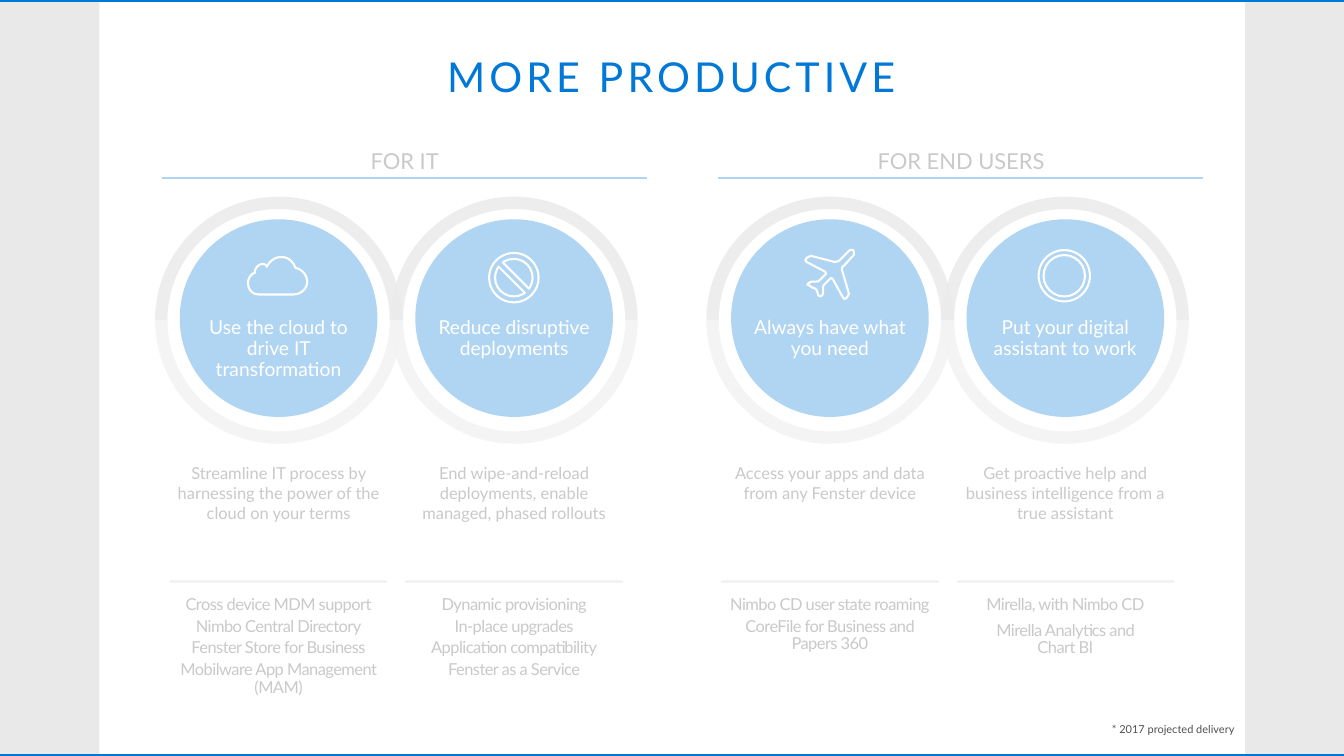
"""Builds the MORE PRODUCTIVE slide: four benefit circles for IT and for end users."""
from dataclasses import dataclass

from lxml import etree
from pptx import Presentation
from pptx.dml.color import RGBColor
from pptx.enum.shapes import MSO_CONNECTOR, MSO_SHAPE as Preset
from pptx.enum.text import MSO_ANCHOR as Anchor, MSO_AUTO_SIZE as AutoSize, PP_ALIGN as Align
from pptx.oxml.ns import qn
from pptx.util import Pt


@dataclass(frozen=True)
class Theme:
    font: str = "Lato"
    blue: str = "0078D7"
    white: str = "FFFFFF"
    text: str = "525252"
    note: str = "505050"
    margin: str = "E9E9E9"
    ring_top: str = "BFBFBF"
    ring_bottom: str = "D9D9D9"
    title_size: int = 30
    header_size: int = 16
    circle_size: int = 14
    body_size: int = 12
    note_size: int = 8


theme = Theme()
presentation = Presentation()
presentation.slide_width, presentation.slide_height = Pt(979.2), Pt(550.8)
slide = presentation.slides.add_slide(presentation.slide_layouts[6])
shapes = slide.shapes


def paint(shape, fill=None, line=None, width=1.5, opacity=100):
    shape.shadow.inherit = False
    if fill:
        shape.fill.solid()
        shape.fill.fore_color.rgb = RGBColor.from_string(fill)
        if opacity < 100:
            color = shape.fill._xPr.find(qn("a:solidFill"))[0]
            etree.SubElement(color, qn("a:alpha")).set("val", str(opacity * 1000))
    else:
        shape.fill.background()
    if line:
        shape.line.color.rgb = RGBColor.from_string(line)
        shape.line.width = Pt(width)
    else:
        shape.line.fill.background()


def write_text(shape, text, size, color=theme.text, insets=(0, 0, 0, 0), align=Align.CENTER,
               anchor=Anchor.TOP, line_spacing=0.9, space_after=0, tracking=0, wrap=True):
    frame = shape.text_frame
    frame.word_wrap, frame.vertical_anchor = wrap, anchor
    frame.auto_size = AutoSize.NONE if wrap else AutoSize.SHAPE_TO_FIT_TEXT
    (frame.margin_left, frame.margin_top,
     frame.margin_right, frame.margin_bottom) = [Pt(inset) for inset in insets]
    for index, words in enumerate(text.split("\n")):
        paragraph = frame.add_paragraph() if index else frame.paragraphs[0]
        paragraph.alignment = align
        paragraph.line_spacing, paragraph.space_after = line_spacing, Pt(space_after)
        run = paragraph.add_run()
        run.text = words
        run.font.name, run.font.size = theme.font, Pt(size)
        run.font.color.rgb = RGBColor.from_string(color)
        if tracking:
            run._r.get_or_add_rPr().set("spc", str(int(tracking * 100)))


for left in (0, 907.2):
    paint(shapes.add_shape(Preset.RECTANGLE, Pt(left), Pt(1.4), Pt(72.5), Pt(548)), theme.margin)
for top in (549.4, 0):
    bar = shapes.add_shape(Preset.RECTANGLE, 0, Pt(top), presentation.slide_width, Pt(1.4))
    paint(bar, theme.blue, theme.blue, 0.75)

title = shapes.add_textbox(Pt(49.7), Pt(34.6), Pt(879.1), Pt(43.9))
write_text(title, "MORE PRODUCTIVE", theme.title_size, theme.blue, (11.5, 7.2, 11.5, 7.2),
           space_after=6, tracking=3)

columns = [
    (203, 192.2, 3, "Use the cloud to drive IT transformation",
     "Streamline IT process by harnessing the power of the cloud on your terms",
     "Cross device MDM support\nNimbo Central Directory\nFenster Store for Business\n"
     "Mobilware App Management (MAM)"),
    (374.6, 173.5, 3, "Reduce disruptive deployments",
     "End wipe-and-reload deployments, enable managed, phased rollouts",
     "Dynamic provisioning\nIn-place upgrades\nApplication compatibility\nFenster as a Service"),
    (604.7, 190.1, 3, "Always have what you need",
     "Access your apps and data from any Fenster device",
     "Nimbo CD user state roaming\nCoreFile for Business and Papers 360"),
    (776.2, 173.5, 6, "Put your digital assistant to work",
     "Get proactive help and business intelligence from a true assistant",
     "Mirella, with Nimbo CD\nMirella Analytics and Chart BI"),
]
box_insets = (14.4, 7.2, 14.4, 7.2)
lines = [(118.1, 471.6, 129.6, theme.blue, 1), (523.4, 876.2, 129.6, theme.blue, 1)]

for center, list_width, list_gap, promise, description, features in columns:
    feature_list = shapes.add_shape(Preset.RECTANGLE, Pt(center - list_width / 2), Pt(398.2),
                                    Pt(list_width), Pt(139))
    paint(feature_list, theme.white)
    write_text(feature_list, features, theme.body_size, insets=(21.6, 36, 21.6, 11.5),
               space_after=list_gap, tracking=-0.4)
    paint(shapes.add_shape(Preset.OVAL, Pt(center - 72), Pt(159.8), Pt(144), Pt(144)), theme.blue)
    promise_box = shapes.add_textbox(Pt(center - 75.6), Pt(224.6), Pt(151.2), Pt(86.4))
    write_text(promise_box, promise, theme.circle_size, theme.white, box_insets)
    description_box = shapes.add_textbox(Pt(center - 95), Pt(330.5), Pt(190), Pt(86.4))
    write_text(description_box, description, theme.body_size, insets=box_insets, line_spacing=1)
    lines.append((center - 79.2, center + 79.2, 423.4, theme.ring_bottom, 2.25))
    for rotation, color in ((0, theme.ring_top), (180, theme.ring_bottom)):
        half_ring = shapes.add_shape(Preset.BLOCK_ARC, Pt(center - 90), Pt(143.3), Pt(180), Pt(180))
        half_ring.adjustments[2] = 0.05
        half_ring.rotation = rotation
        paint(half_ring, color, opacity=90)

cloud = [(48, 11), (46, 5, 41, 0, 34, 0), (27, 0, 22, 4, 19, 10), (19, 8, 16, 7, 15, 7),
         (11, 7, 7, 11, 7, 15), (7, 16), (3, 17, 0, 22, 0, 26), (0, 33, 4, 38, 11, 38),
         (46, 38), (54, 38, 60, 32, 60, 25), (60, 18, 54, 12, 48, 11)]
plane = [(46, 3), (49, 0, 50, 5, 50, 5), (51, 7, 50, 9, 49, 9), (40, 19),
         (38, 19, 38, 21, 38, 23), (45, 47), (45, 48, 44, 50, 43, 51), (42, 52),
         (41, 53, 40, 53, 39, 51), (29, 33), (28, 31, 27, 31, 26, 32), (20, 38),
         (19, 39, 18, 41, 19, 43), (19, 45), (19, 46, 19, 48, 18, 49),
         (16, 50), (14, 49), (13, 45), (12, 43), (11, 42), (8, 41), (5, 39), (3, 38),
         (5, 36), (6, 35, 8, 35, 9, 35), (11, 35), (13, 35, 15, 35, 16, 33), (22, 27),
         (21, 25), (2, 15), (1, 14, 0, 13, 2, 12), (2, 11), (4, 10, 6, 9, 7, 9), (30, 15),
         (32, 15, 34, 15, 35, 14)]
icon_unit = 0.72
for left, top, segments, curve_steps in ((180.7, 187.2, cloud, 5), (586.1, 180, plane, 2)):
    trace = [segments[0]]
    for segment in segments[1:]:
        if len(segment) == 2:
            trace.append(segment)
            continue
        start = trace[-1]
        for step in range(1, curve_steps + 1):
            t = step / curve_steps
            trace.append(tuple(
                (1 - t) ** 3 * start[axis] + 3 * t * (1 - t) ** 2 * segment[axis]
                + 3 * t ** 2 * (1 - t) * segment[axis + 2] + t ** 3 * segment[axis + 4]
                for axis in (0, 1)))
    corners = [(Pt(left + x * icon_unit), Pt(top + y * icon_unit)) for x, y in trace]
    builder = shapes.build_freeform(*corners[0])
    builder.add_line_segments(corners[1:], close=True)
    paint(builder.convert_to_shape(), line=theme.white)

for left, width, header in ((250.6, 88.6, "FOR IT"), (578.2, 244.1, "FOR END USERS")):
    header_box = shapes.add_textbox(Pt(left), Pt(106.6), Pt(width), Pt(23))
    write_text(header_box, header, theme.header_size, anchor=Anchor.MIDDLE, space_after=3)

for start, end, height, color, width in lines:
    connector = shapes.add_connector(MSO_CONNECTOR.STRAIGHT, Pt(start), Pt(height),
                                     Pt(end), Pt(height))
    connector.line.color.rgb = RGBColor.from_string(color)
    connector.line.width = Pt(width)
    etree.SubElement(connector._element.spPr, qn("a:effectLst"))

no_entry = shapes.add_shape(Preset.NO_SYMBOL, Pt(356.4), Pt(184.3), Pt(36), Pt(36))
no_entry.adjustments[0] = 0.12
paint(no_entry, line=theme.white)
for diameter in (37.4, 30.2):
    assistant_ring = shapes.add_shape(Preset.OVAL, Pt(775.4 - diameter / 2),
                                      Pt(200.9 - diameter / 2), Pt(diameter), Pt(diameter))
    paint(assistant_ring, line=theme.white)

for left, top, width in ((502.6, 95, 393.1), (87.8, 109.4, 406.1)):
    veil = shapes.add_shape(Preset.RECTANGLE, Pt(left), Pt(top), Pt(width), Pt(422.6))
    paint(veil, theme.white, opacity=69)

footnote = shapes.add_textbox(Pt(795.6), Pt(523.4), Pt(118.8), Pt(31.7))
write_text(footnote, "* 2017 projected delivery", theme.note_size, theme.note,
           (14.4, 11.5, 14.4, 11.5), Align.LEFT, space_after=6, wrap=False)

presentation.save("out.pptx")
